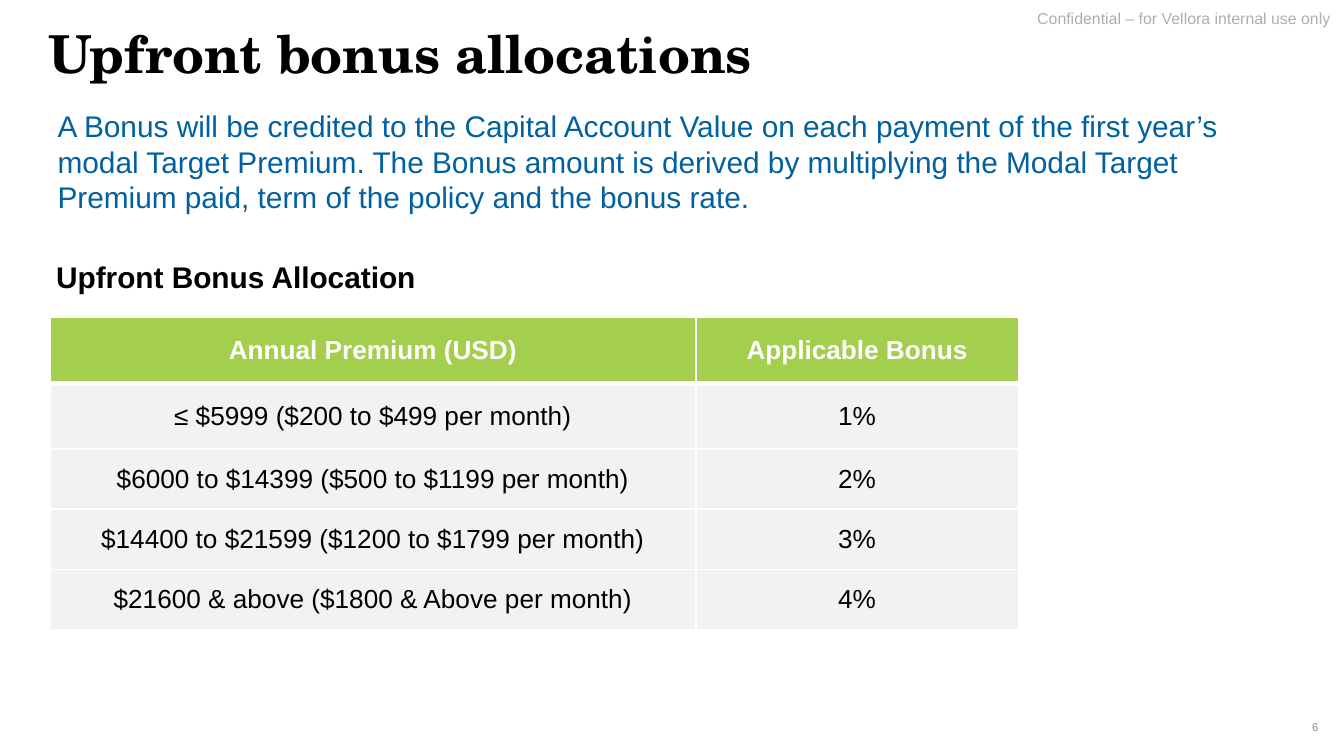
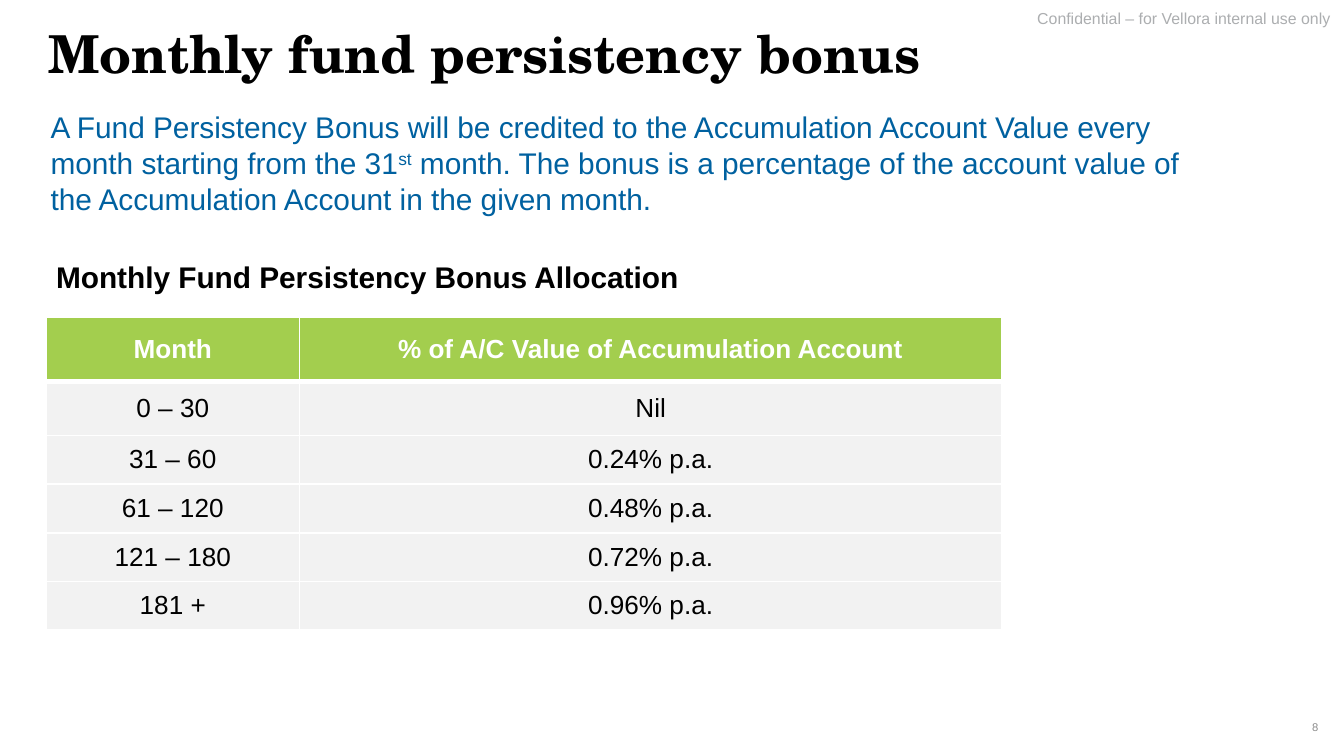
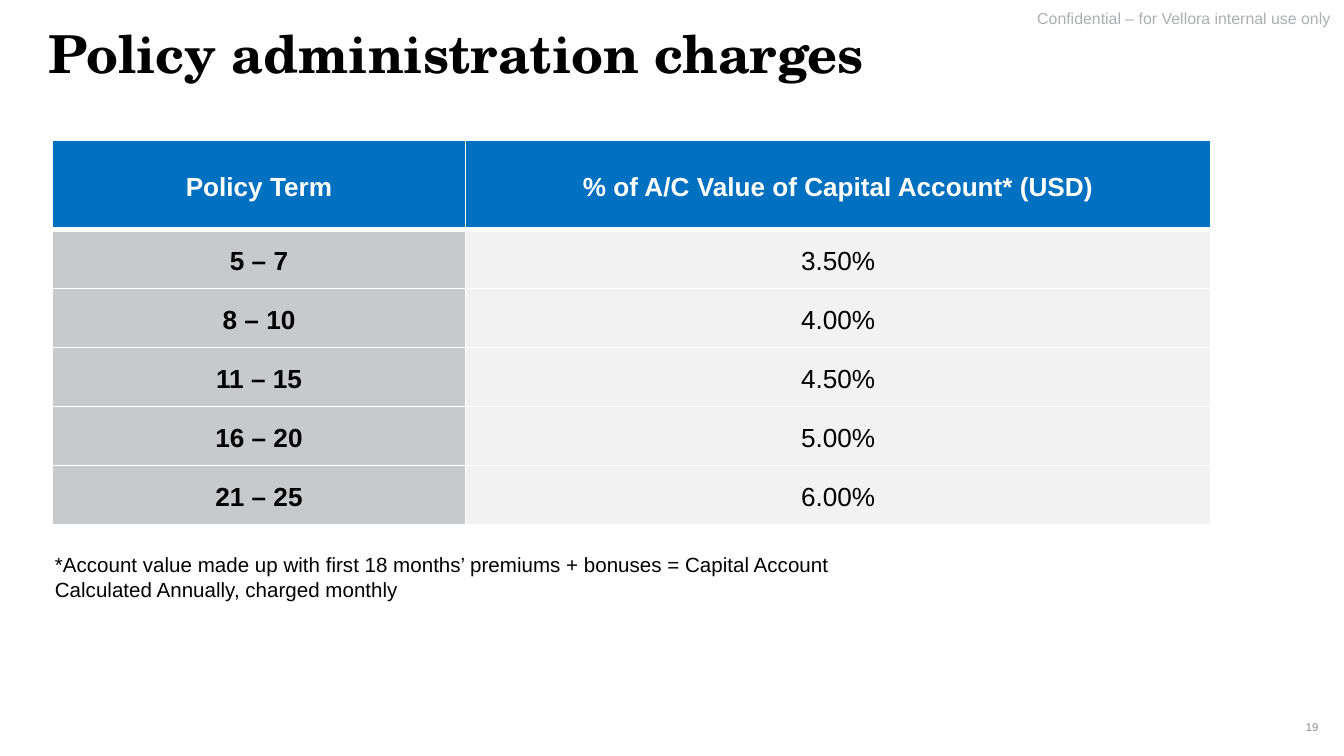
from lxml.etree import SubElement
from pptx import Presentation
from pptx.dml.color import RGBColor
from pptx.enum.text import MSO_ANCHOR, MSO_AUTO_SIZE, PP_ALIGN
from pptx.oxml.ns import qn
from pptx.util import Pt

COLORS = {
    "black": "000000",
    "white": "FFFFFF",
    "green": "A3CE4E",
    "blue": "0070C0",
    "lead": "0061A0",
    "row": "F2F2F2",
    "term": "C8C9CA",
    "note": "ACAEB0",
    "number": "8C8C8C",
}
BODY_FONT = "Arial"
TITLE_FONT = "TeX Gyre Schola"
TITLE_ONLY = 5
DEFAULT_INSETS = (7.2, 3.6)
TIGHT_INSETS = (5, 2.9)


def rgb(name):
    return RGBColor.from_string(COLORS[name])


def set_insets(target, insets):
    """Apply (horizontal, vertical) insets to a text frame or a cell."""
    target.margin_left = target.margin_right = Pt(insets[0])
    target.margin_top = target.margin_bottom = Pt(insets[1])


def set_borders(cell, widths):
    """Draw white left, right, top and bottom borders of the given widths."""
    properties = cell._tc.get_or_add_tcPr()
    for side, width in zip("LRTB", widths):
        line = SubElement(properties, qn(f"a:ln{side}"), w=str(Pt(width)))
        fill = SubElement(line, qn("a:solidFill"))
        SubElement(fill, qn("a:srgbClr"), val=COLORS["white"])


class Deck:
    def __init__(self):
        self.presentation = Presentation()
        self.presentation.slide_width = Pt(720)
        self.presentation.slide_height = Pt(405)
        self.slide = None

    def format_text(self, text_frame, size, color, bold=False, font=BODY_FONT,
                    align=PP_ALIGN.LEFT, spacing=1.0):
        for paragraph in text_frame.paragraphs:
            paragraph.alignment = align
            paragraph.line_spacing = spacing
            for run in paragraph.runs:
                run.font.name = font
                run.font.size = Pt(size)
                run.font.bold = bold
                run.font.color.rgb = rgb(color)

    def add_slide(self, title, number):
        layout = self.presentation.slide_layouts[TITLE_ONLY]
        self.slide = self.presentation.slides.add_slide(layout)
        self.add_text("Confidential – for Vellora internal use only", (499.7, 5.8, 220.3, 12.2),
                      8.5, "note", insets=(7.2, 0), align=PP_ALIGN.RIGHT, spacing=0.9)
        self.add_title(title)
        self.add_text(str(number), (658, 378.7, 53.3, 21.6), 6, "number",
                      insets=TIGHT_INSETS, anchor=MSO_ANCHOR.MIDDLE, align=PP_ALIGN.RIGHT)

    def add_title(self, text):
        shape = self.slide.shapes.title
        shape.left, shape.top, shape.width, shape.height = map(Pt, (20.9, 12.2, 546.5, 38.9))
        text_frame = shape.text_frame
        text_frame.text = text
        text_frame.vertical_anchor = MSO_ANCHOR.TOP
        text_frame.auto_size = MSO_AUTO_SIZE.NONE
        set_insets(text_frame, TIGHT_INSETS)
        self.format_text(text_frame, 28, "black", bold=True, font=TITLE_FONT, spacing=0.9)

    def add_text(self, text, box, size, color, insets=DEFAULT_INSETS,
                 anchor=MSO_ANCHOR.TOP, wrap=True, grow=False, **style):
        """Add a text box; text between two ^ marks is superscript."""
        text_frame = self.slide.shapes.add_textbox(*map(Pt, box)).text_frame
        text_frame.word_wrap = wrap
        text_frame.vertical_anchor = anchor
        text_frame.auto_size = MSO_AUTO_SIZE.SHAPE_TO_FIT_TEXT if grow else MSO_AUTO_SIZE.NONE
        set_insets(text_frame, insets)
        for index, line in enumerate(text.split("\n")):
            paragraph = text_frame.add_paragraph() if index else text_frame.paragraphs[0]
            for position, part in enumerate(line.split("^")):
                run = paragraph.add_run()
                run.text = part
                if position % 2:
                    run._r.get_or_add_rPr().set("baseline", "30000")
        self.format_text(text_frame, size, color, **style)

    def add_lead(self, text, box):
        self.add_text(text, box, 16, "lead", grow=True)

    def add_heading(self, text, width, wrap=True):
        self.add_text(text, (23, 133.2, width, 26.6), 16, "black",
                      wrap=wrap, grow=True, bold=True, spacing=1.1)

    def add_table(self, rows, left, top, column_widths, row_heights, header="green",
                  first_column="row", insets=DEFAULT_INSETS, spacing=1.0):
        """Add a table with a header row and, when coloured, a bold first column."""
        table = self.slide.shapes.add_table(
            len(rows), len(column_widths), Pt(left), Pt(top),
            Pt(sum(column_widths)), Pt(sum(row_heights))).table
        table.horz_banding = False
        for column, width in zip(table.columns, column_widths):
            column.width = Pt(width)
        for row, height in zip(table.rows, row_heights):
            row.height = Pt(height)
        for row_index, texts in enumerate(rows):
            is_header = row_index == 0
            for column_index, text in enumerate(texts):
                cell = table.cell(row_index, column_index)
                fill = header if is_header else "row" if column_index else first_column
                set_borders(cell, (1, 1, 3 if row_index == 1 else 1, 3 if is_header else 1))
                cell.fill.solid()
                cell.fill.fore_color.rgb = rgb(fill)
                cell.vertical_anchor = MSO_ANCHOR.MIDDLE
                set_insets(cell, insets)
                cell.text_frame.text = text
                self.format_text(cell.text_frame, 14, "white" if is_header else "black",
                                 bold=fill != "row", align=PP_ALIGN.CENTER, spacing=spacing)


def add_upfront_bonus(deck):
    deck.add_slide("Upfront bonus allocations", 6)
    deck.add_table(
        [("Annual Premium (USD)", "Applicable Bonus"),
         ("≤ $5999 ($200 to $499 per month)", "1%"),
         ("$6000 to $14399 ($500 to $1199 per month)", "2%"),
         ("$14400 to $21599 ($1200 to $1799 per month)", "3%"),
         ("$21600 & above ($1800 & Above per month)", "4%")],
        26.8, 169.9, (346, 172.8), [35.3] * 2 + [32.3] * 3)
    deck.add_lead(
        "A Bonus will be credited to the Capital Account Value on each payment of the first "
        "year’s modal Target Premium. The Bonus amount is derived by multiplying the Modal "
        "Target Premium paid, term of the policy and the bonus rate.",
        (23.8, 54, 643.7, 65.5))
    deck.add_heading("Upfront Bonus Allocation", 209.5, wrap=False)


def add_persistency_bonus(deck):
    deck.add_slide("Monthly fund persistency bonus", 8)
    deck.add_table(
        [("Month", "% of A/C Value of Accumulation Account"),
         ("0 – 30", "Nil"),
         ("31 – 60", "0.24% p.a."),
         ("61 – 120", "0.48% p.a."),
         ("121 – 180", "0.72% p.a."),
         ("181 +", "0.96% p.a.")],
        24.7, 169.9, (135.8, 376.2), [34.6, 28.8] + [26.1] * 4)
    deck.add_lead(
        "A Fund Persistency Bonus will be credited to the Accumulation Account Value every "
        "month starting from the 31^st^ month. The bonus is a percentage of the account value "
        "of the Accumulation Account in the given month.",
        (20, 54.7, 636.5, 65.5))
    deck.add_heading("Monthly Fund Persistency Bonus Allocation", 472.3)


def add_administration_charges(deck):
    deck.add_slide("Policy administration charges", 19)
    deck.add_table(
        [("Policy Term", "% of A/C Value of Capital Account* (USD)"),
         ("5 – 7", "3.50%"),
         ("8 – 10", "4.00%"),
         ("11 – 15", "4.50%"),
         ("16 – 20", "5.00%"),
         ("21 – 25", "6.00%")],
        28.1, 75, (221.4, 399.2), [48] + [31.6] * 5,
        header="blue", first_column="term", insets=(5, 0), spacing=1.15)
    deck.add_text(
        "*Account value made up with first 18 months’ premiums + bonuses = Capital Account\n"
        "Calculated Annually, charged monthly",
        (22.3, 292.3, 589, 33.8), 11, "black", anchor=MSO_ANCHOR.MIDDLE, grow=True)


def main():
    deck = Deck()
    add_upfront_bonus(deck)
    add_persistency_bonus(deck)
    add_administration_charges(deck)
    deck.presentation.save("out.pptx")


if __name__ == "__main__":
    main()
